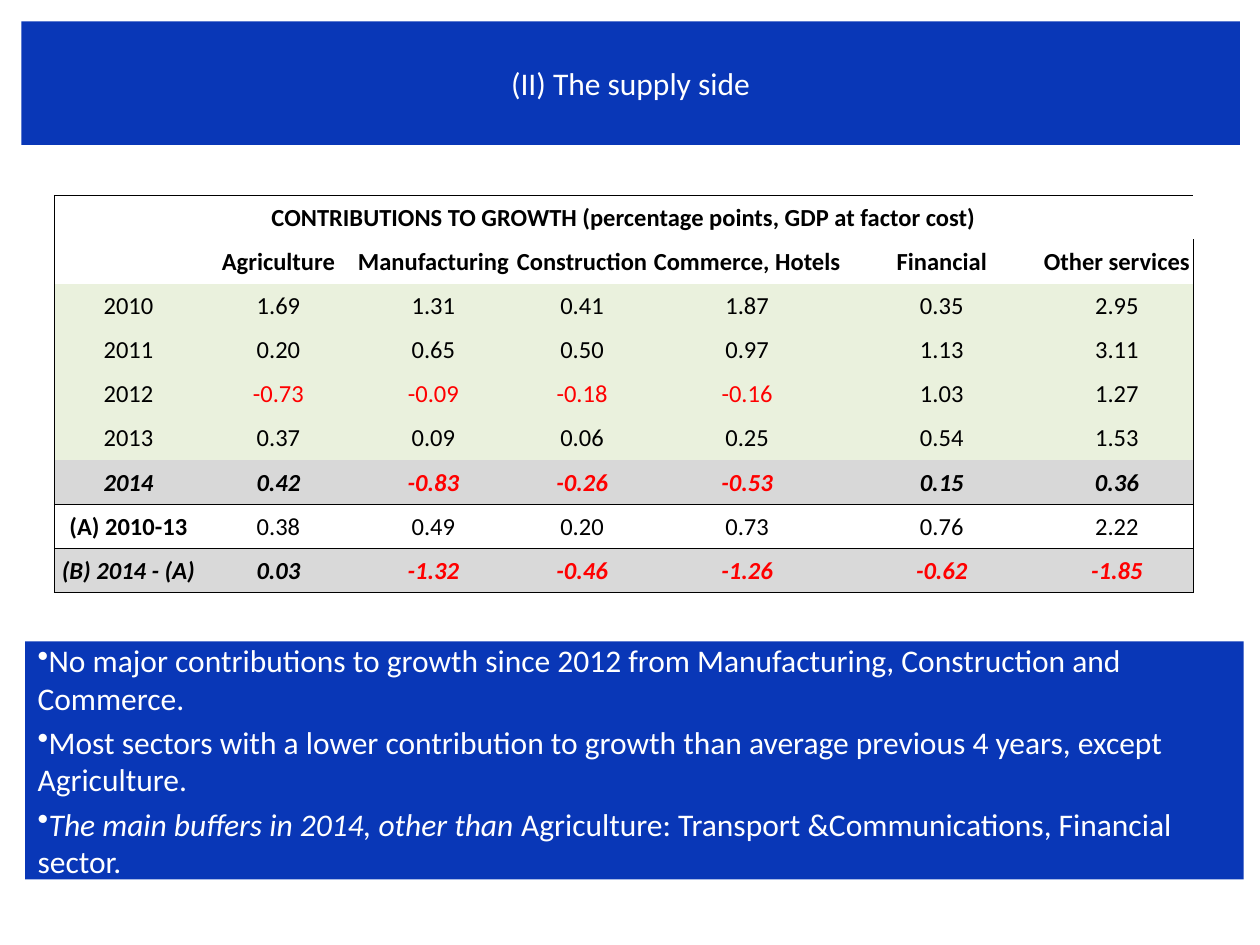
import dataclasses
import pptx
import pptx.dml.color
import pptx.enum.shapes
import pptx.enum.text
import pptx.oxml
import pptx.oxml.ns
import pptx.util
from pptx.util import Inches


@dataclasses.dataclass(frozen=True)
class Theme:
    font: str = "Calibri"
    band: str = "0937B7"
    light: str = "FFFFFF"
    dark: str = "000000"
    negative: str = "FF0000"
    green: str = "EAF1DD"
    grey: str = "D8D8D8"
    pale_grey: str = "D9D9D9"
    text_size: int = 18
    table_size: int = 14
    border_width: float = 0.5
    plain_table: str = "{2D5ABB26-0587-4C30-8999-92F81FD0307C}"


TITLE = "(II) The supply side"
POINTS = [
    [("No major contributions to growth since 2012 from Manufacturing, "
      "Construction and Commerce.", False)],
    [("Most sectors with a lower contribution to growth than average "
      "previous 4 years, except Agriculture.", False)],
    [("The main buffers in 2014, other than ", True),
     ("Agriculture: Transport &Communications, Financial sector.", False)],
]
TABLE_TITLE = "CONTRIBUTIONS TO GROWTH (percentage points, GDP at factor cost)"
SECTORS = ["", "Agriculture", "Manufacturing", "Construction",
           "Commerce, Hotels", "Financial", "Other services"]
GROWTH = [
    ("2010", 1.69, 1.31, 0.41, 1.87, 0.35, 2.95),
    ("2011", 0.20, 0.65, 0.50, 0.97, 1.13, 3.11),
    ("2012", -0.73, -0.09, -0.18, -0.16, 1.03, 1.27),
    ("2013", 0.37, 0.09, 0.06, 0.25, 0.54, 1.53),
    ("2014", 0.42, -0.83, -0.26, -0.53, 0.15, 0.36),
    ("(A) 2010-13", 0.38, 0.49, 0.20, 0.73, 0.76, 2.22),
    ("(B) 2014 - (A)", 0.03, -1.32, -0.46, -1.26, -0.62, -1.85),
]
COLUMN_WIDTHS = [1.18, 1.2, 1.26, 1.1, 1.52, 1.57, 1.21]
ROW_HEIGHT = 0.35
YEAR_2014, AVERAGE, DIFFERENCE = 6, 7, 8


class SlideBuilder:
    def __init__(self, slide, theme):
        self.slide = slide
        self.theme = theme

    def style(self, span, size, color, bold=False, italic=False):
        span.font.name = self.theme.font
        span.font.size = pptx.util.Pt(size)
        span.font.bold = bold
        span.font.italic = italic
        span.font.color.rgb = pptx.dml.color.RGBColor.from_string(color)

    def fill(self, target, color):
        target.fill.solid()
        target.fill.fore_color.rgb = pptx.dml.color.RGBColor.from_string(color)

    def band(self, left, top, width, height, paragraphs, align, bullet=None):
        box = self.slide.shapes.add_shape(
            pptx.enum.shapes.MSO_SHAPE.RECTANGLE,
            Inches(left), Inches(top), Inches(width), Inches(height))
        box.shadow.inherit = False
        self.fill(box, self.theme.band)
        box.line.fill.background()
        frame = box.text_frame
        frame.word_wrap = True
        frame.vertical_anchor = pptx.enum.text.MSO_ANCHOR.MIDDLE
        for index, parts in enumerate(paragraphs):
            para = frame.add_paragraph() if index else frame.paragraphs[0]
            para.alignment = align
            para.space_before = pptx.util.Pt(0.2 * self.theme.text_size)
            if bullet:
                properties = para._p.get_or_add_pPr()
                mark = pptx.oxml.parse_xml(
                    f'<a:buChar {pptx.oxml.ns.nsdecls("a")} char="{bullet}"/>')
                properties.append(mark)
            for text, italic in parts:
                span = para.add_run()
                span.text = text
                self.style(span, self.theme.text_size, self.theme.light, italic=italic)

    def border(self, cell, sides):
        properties = cell._tc.get_or_add_tcPr()
        width = pptx.util.Pt(self.theme.border_width)
        for side in sides:
            properties.append(pptx.oxml.parse_xml(
                f'<a:ln{side} {pptx.oxml.ns.nsdecls("a")} w="{width}">'
                f'<a:solidFill><a:srgbClr val="{self.theme.dark}"/></a:solidFill>'
                f'</a:ln{side}>'))

    def cell(self, cell, text, background, sides, **look):
        cell.margin_left = cell.margin_right = cell.margin_top = Inches(0.01)
        cell.margin_bottom = 0
        cell.vertical_anchor = pptx.enum.text.MSO_ANCHOR.MIDDLE
        self.border(cell, sides)
        self.fill(cell, background)
        cell.text_frame.text = text
        para = cell.text_frame.paragraphs[0]
        para.alignment = pptx.enum.text.PP_ALIGN.CENTER
        color = self.theme.negative if text.startswith("-") else self.theme.dark
        for span in para.runs:
            self.style(span, self.theme.table_size, color, **look)

    def growth_table(self, left, top):
        theme = self.theme
        title_row = [TABLE_TITLE] + [""] * (len(SECTORS) - 1)
        values = [[label] + [f"{value:.2f}" for value in numbers]
                  for label, *numbers in GROWTH]
        rows = [title_row, SECTORS] + values
        backgrounds = ([theme.light] * 2 + [theme.green] * 4
                       + [theme.grey, theme.light, theme.pale_grey])
        last_row, last_column = len(rows) - 1, len(SECTORS) - 1

        table = self.slide.shapes.add_table(
            len(rows), len(SECTORS), Inches(left), Inches(top),
            Inches(sum(COLUMN_WIDTHS)), Inches(ROW_HEIGHT * len(rows))).table
        table.first_row = table.horz_banding = False
        style_id = table._tbl.tblPr.find(pptx.oxml.ns.qn("a:tableStyleId"))
        style_id.text = theme.plain_table
        for column, width in zip(table.columns, COLUMN_WIDTHS):
            column.width = Inches(width)
        for row in table.rows:
            row.height = Inches(ROW_HEIGHT)

        for r, texts in enumerate(rows):
            emphasis = r in (YEAR_2014, DIFFERENCE)
            for c, text in enumerate(texts):
                edges = {"L": c == 0, "R": c == last_column,
                         "T": r in (0, AVERAGE), "B": r in (YEAR_2014, last_row)}
                sides = [side for side, drawn in edges.items() if drawn]
                bold = r < 2 or emphasis or (r == AVERAGE and c == 0)
                self.cell(table.cell(r, c), text, backgrounds[r], sides,
                          bold=bold, italic=emphasis)
        table.cell(0, 0).merge(table.cell(0, last_column))


def main():
    deck = pptx.Presentation()
    deck.slide_width, deck.slide_height = Inches(10), Inches(7.5)
    page = SlideBuilder(deck.slides.add_slide(deck.slide_layouts[6]), Theme())
    align = pptx.enum.text.PP_ALIGN
    page.band(0.17, 0.17, 9.67, 0.98, [[(TITLE, False)]], align.CENTER)
    page.band(0.2, 5.09, 9.67, 1.89, POINTS, align.LEFT, bullet="•")
    page.growth_table(0.43, 1.55)
    deck.save("out.pptx")


if __name__ == "__main__":
    main()
